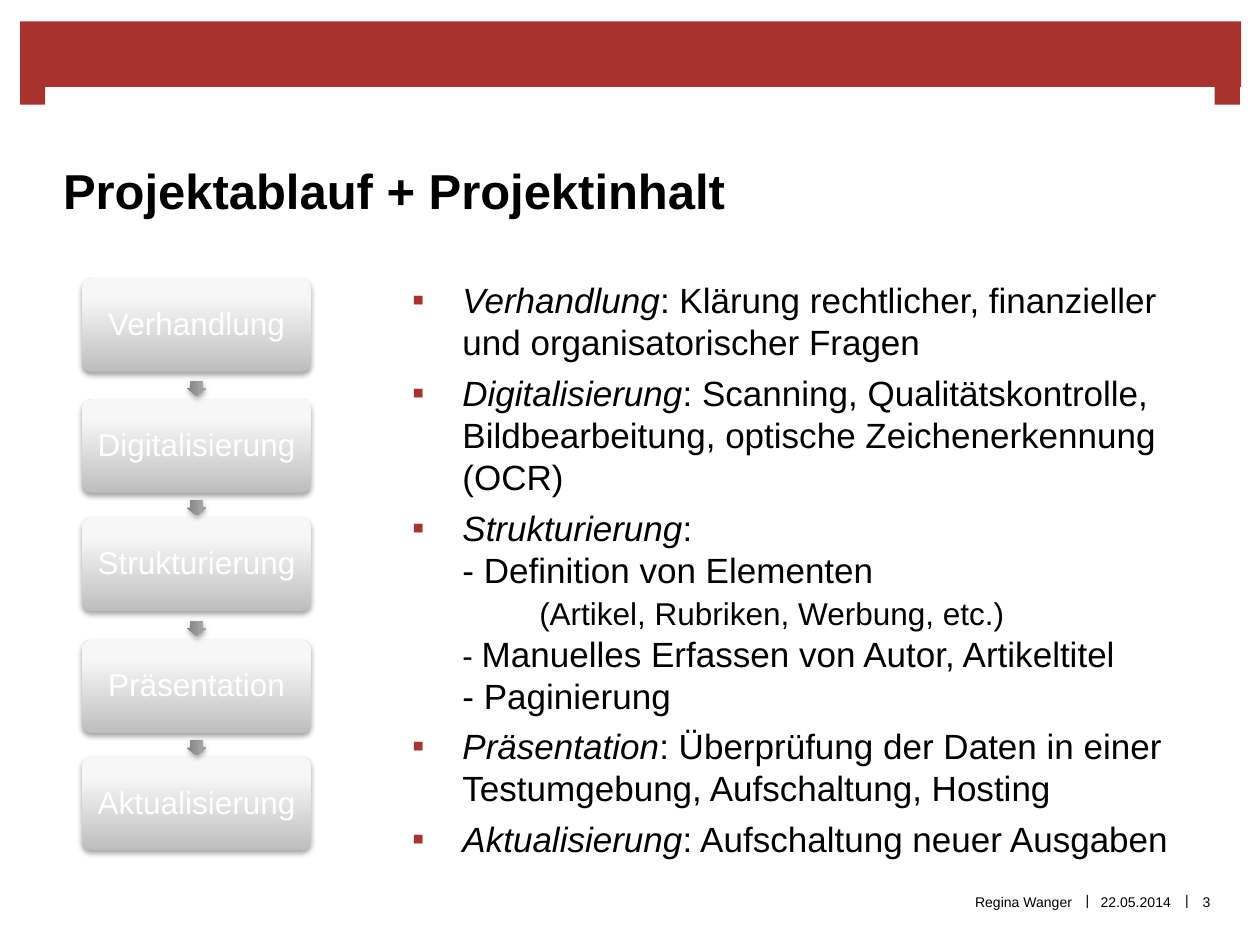
from copy import deepcopy

from lxml.etree import SubElement
from pptx import Presentation
from pptx.dml.color import RGBColor
from pptx.enum.shapes import MSO_SHAPE
from pptx.enum.text import MSO_ANCHOR, MSO_AUTO_SIZE, PP_ALIGN
from pptx.oxml import parse_xml
from pptx.oxml.ns import nsdecls, qn
from pptx.util import Inches, Pt

RED = RGBColor(0xA8, 0x32, 0x2D)
BLACK = RGBColor(0, 0, 0)
WHITE = RGBColor(0xFF, 0xFF, 0xFF)
BOX_SHADES = ((0, "BEBEBE"), (80, "F7F7F7"), (100, "F8F8F8"))
ARROW_SHADES = ((0, "808080"), (80, "A6A6A6"), (100, "A7A7A7"))

TITLE = "Projektablauf + Projektinhalt"

# Process step and top of its box
STEPS = [
    ("Verhandlung", 2.21),
    ("Digitalisierung", 3.17),
    ("Strukturierung", 4.11),
    ("Präsentation", 5.08),
    ("Aktualisierung", 6.01),
]

# For each step: pieces of text with their size
DETAILS = [
    [(": Klärung rechtlicher, finanzieller und organisatorischer Fragen", 20)],
    [(": Scanning, Qualitätskontrolle, Bildbearbeitung, "
      "optische Zeichenerkennung (OCR)", 20)],
    [(": \n- Definition von Elementen\n\t", 20),
     ("(Artikel, Rubriken, Werbung, etc.)\n- ", 18),
     ("Manuelles Erfassen von Autor, Artikeltitel\n- Paginierung", 20)],
    [(": Überprüfung der Daten in einer Testumgebung, Aufschaltung, Hosting", 20)],
    [(": Aufschaltung neuer Ausgaben", 20)],
]

# Left, top, width, height
BANNER = [(0.16, 0.17, 9.69, 0.52), (0.16, 0.65, 0.2, 0.18), (9.64, 0.65, 0.2, 0.18)]

FOOTER = [
    ("Regina Wanger", (5, 6.9, 3.51, 0.51), PP_ALIGN.RIGHT),
    ("|", (8.57, 6.89, 0.12, 0.51), PP_ALIGN.CENTER),
    ("22.05.2014", (8.68, 6.9, 0.67, 0.51), PP_ALIGN.CENTER),
    ("|", (9.36, 6.89, 0.12, 0.51), PP_ALIGN.CENTER),
    ("3", (9.43, 6.9, 0.29, 0.51), PP_ALIGN.CENTER),
]

BOX_LEFT, BOX_WIDTH, BOX_HEIGHT = 0.65, 1.82, 0.74
ARROW_LENGTH, ARROW_WIDTH = 0.12, 0.16


def place(shape, left, top, width, height):
    shape.left, shape.top = Inches(left), Inches(top)
    shape.width, shape.height = Inches(width), Inches(height)


def set_frame(frame, anchor, left=0, right=0, wrap=True):
    frame.margin_left, frame.margin_right = Inches(left), Inches(right)
    frame.margin_top = frame.margin_bottom = 0
    frame.vertical_anchor = anchor
    frame.word_wrap = wrap
    frame.auto_size = MSO_AUTO_SIZE.NONE


def add_span(para, text, size, color=BLACK, bold=False, italic=False):
    """Add a run; line breaks in the text keep the run's size."""
    for index, line in enumerate(text.split("\n")):
        if index:
            para.add_line_break()
            para._p[-1].append(deepcopy(span._r.rPr))
        span = para.add_run()
        span.text = line
        font = span.font
        font.name, font.size, font.color.rgb = "Arial", Pt(size), color
        font.bold, font.italic = bold, italic


def add_bullet(para):
    """Give the paragraph a red square, a hanging indent and a tab stop."""
    props = para._p.get_or_add_pPr()
    props.set("marL", str(Inches(0.4)))
    props.set("indent", str(-Inches(0.4)))
    color = SubElement(props, qn("a:buClr"))
    SubElement(color, qn("a:srgbClr"), val=str(RED))
    SubElement(props, qn("a:buFont"), typeface="Arial")
    SubElement(props, qn("a:buChar"), char="▪")
    tabs = SubElement(props, qn("a:tabLst"))
    SubElement(tabs, qn("a:tab"), pos=str(Inches(1.01)), algn="l")


def add_shaded(slide, kind, area, shades):
    """Add a borderless shape with a vertical gradient and a soft shadow."""
    shape = slide.shapes.add_shape(kind, *map(Inches, area))
    stops = "".join(
        f'<a:gs pos="{position * 1000}"><a:srgbClr val="{color}"/></a:gs>'
        for position, color in shades)
    props = shape._element.spPr
    props.append(parse_xml(
        f'<a:gradFill {nsdecls("a")} rotWithShape="1"><a:gsLst>{stops}</a:gsLst>'
        '<a:lin ang="16200000" scaled="0"/></a:gradFill>'))
    shape.line.fill.background()
    props.append(parse_xml(
        f'<a:effectLst {nsdecls("a")}><a:outerShdw blurRad="{Pt(3.1)}" '
        f'dist="{Pt(1.8)}" dir="5400000" rotWithShape="0"><a:srgbClr val="000000">'
        '<a:alpha val="35000"/></a:srgbClr></a:outerShdw></a:effectLst>'))
    return shape


def add_banner(slide):
    for area in BANNER:
        bar = slide.shapes.add_shape(MSO_SHAPE.RECTANGLE, *map(Inches, area))
        bar.fill.solid()
        bar.fill.fore_color.rgb = RED
        bar.line.fill.background()
        bar.shadow.inherit = False


def add_footer(slide):
    for text, area, alignment in FOOTER:
        box = slide.shapes.add_textbox(*map(Inches, area))
        set_frame(box.text_frame, MSO_ANCHOR.MIDDLE, wrap=False)
        para = box.text_frame.paragraphs[0]
        para.alignment = alignment
        add_span(para, text, 8)


def fill_title(title):
    place(title, 0.35, 0.68, 9.29, 1.06)
    title.fill.solid()
    title.fill.fore_color.rgb = WHITE
    set_frame(title.text_frame, MSO_ANCHOR.BOTTOM, 0.15, 0.16)
    para = title.text_frame.paragraphs[0]
    para.alignment = PP_ALIGN.LEFT
    add_span(para, TITLE, 28, bold=True)


def fill_body(body):
    place(body, 3.12, 2.21, 6.52, 4.69)
    frame = body.text_frame
    set_frame(frame, MSO_ANCHOR.TOP, 0.15, 0.16)
    for index, ((name, _), pieces) in enumerate(zip(STEPS, DETAILS)):
        para = frame.add_paragraph() if index else frame.paragraphs[0]
        add_bullet(para)
        para.space_before = Pt(5 if index else 0)
        para.line_spacing = 1.0
        add_span(para, name, 20, italic=True)
        for text, size in pieces:
            add_span(para, text, size)


def add_process(slide):
    for name, top in STEPS:
        box = add_shaded(slide, MSO_SHAPE.ROUNDED_RECTANGLE,
                         (BOX_LEFT, top, BOX_WIDTH, BOX_HEIGHT), BOX_SHADES)
        box.adjustments[0] = 0.1
        set_frame(box.text_frame, MSO_ANCHOR.MIDDLE, 0.07, 0.07)
        para = box.text_frame.paragraphs[0]
        para.alignment = PP_ALIGN.CENTER
        para.line_spacing = 0.9
        add_span(para, name, 18, WHITE)

    arrow_left = BOX_LEFT + (BOX_WIDTH - ARROW_LENGTH) / 2
    for (_, upper), (_, lower) in zip(STEPS, STEPS[1:]):
        middle = (upper + BOX_HEIGHT + lower) / 2 + 0.02
        arrow = add_shaded(
            slide, MSO_SHAPE.RIGHT_ARROW,
            (arrow_left, middle - ARROW_WIDTH / 2, ARROW_LENGTH, ARROW_WIDTH),
            ARROW_SHADES)
        arrow.adjustments[0] = 0.6
        arrow.rotation = 90


def main():
    deck = Presentation()
    deck.slide_width, deck.slide_height = Inches(10), Inches(7.5)
    slide = deck.slides.add_slide(deck.slide_layouts[1])
    add_banner(slide)
    add_footer(slide)
    fill_title(slide.shapes.title)
    fill_body(slide.placeholders[1])
    add_process(slide)
    deck.save("out.pptx")


if __name__ == "__main__":
    main()
